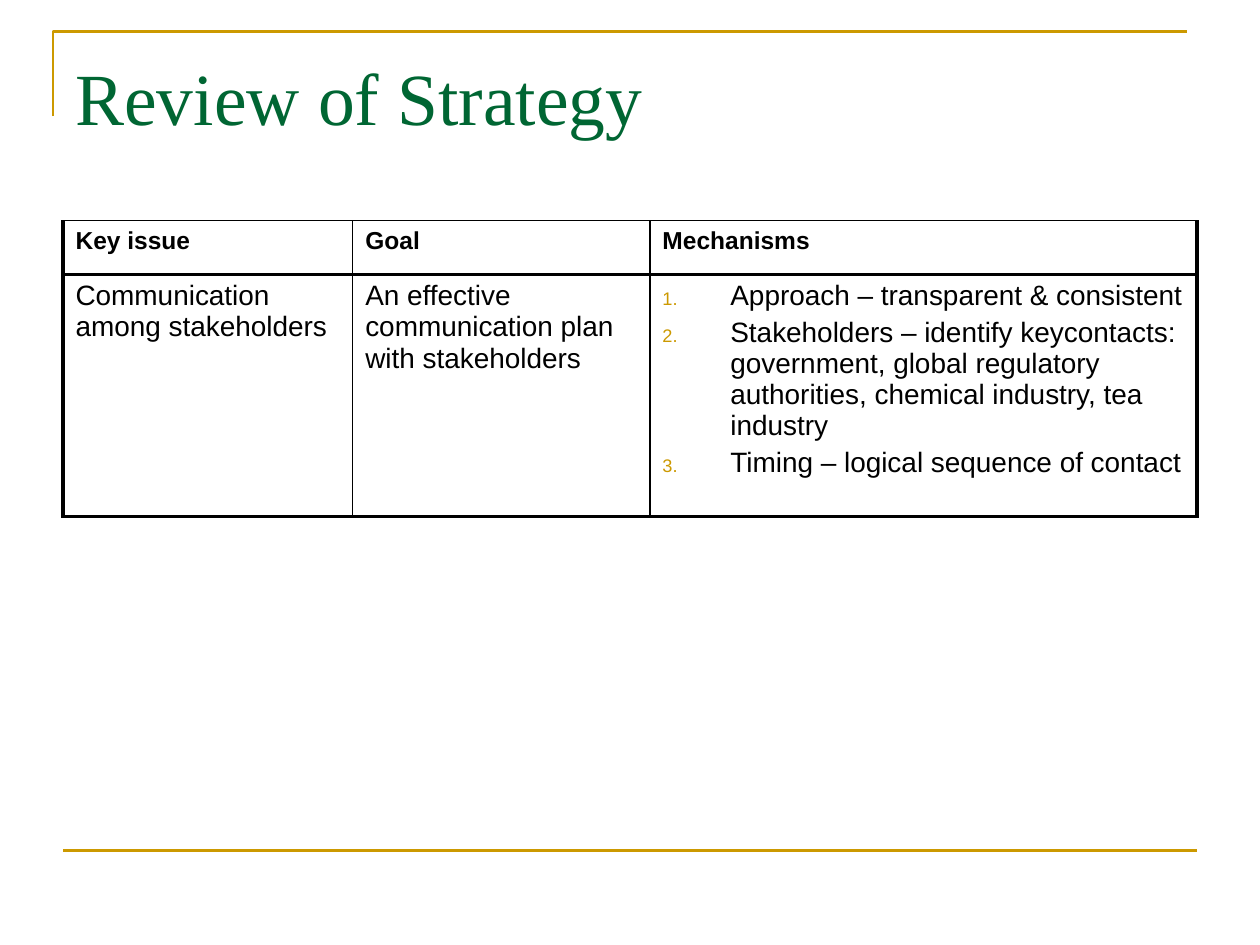
from pptx import Presentation
from pptx.dml.color import RGBColor
from pptx.enum.shapes import MSO_CONNECTOR
from pptx.oxml.ns import qn
from pptx.util import Cm, Pt
from lxml.etree import SubElement

GOLD = RGBColor(0xCC, 0x99, 0x00)
GREEN = RGBColor(0x00, 0x66, 0x33)
BLACK = RGBColor(0, 0, 0)

THIN, THICK = 1, 2.25
COLUMN_WIDTHS = [5.84, 5.99, 11.03]
ROW_HEIGHTS = [1.08, 4.88]
ROWS = [
    [["Key issue"], ["Goal"], ["Mechanisms"]],
    [
        ["Communication among stakeholders"],
        ["An effective communication plan with stakeholders"],
        [
            "Approach – transparent & consistent",
            "Stakeholders – identify keycontacts: government, global regulatory "
            "authorities, chemical industry, tea industry",
            "Timing – logical sequence of contact",
        ],
    ],
]
ROW_FONTS = [
    {"name": "Arial", "size": Pt(14), "bold": True},
    {"name": "Arial", "size": Pt(16), "bold": False},
]


def write(para, text, color, font_format):
    span = para.add_run()
    span.text = text
    span.font.color.rgb = color
    for name, value in font_format.items():
        setattr(span.font, name, value)


def add_fill(parent, tag, color):
    fill = SubElement(parent, qn(tag))
    SubElement(fill, qn("a:srgbClr"), val=str(color))


deck = Presentation()
deck.slide_width, deck.slide_height = Cm(25.4), Cm(19.05)
page = deck.slides.add_slide(deck.slide_layouts[6])

builder = page.shapes.build_freeform(Cm(1.07), Cm(2.34))
builder.add_line_segments([(Cm(1.07), Cm(0.64)), (Cm(23.93), Cm(0.64))], close=False)
corner = builder.convert_to_shape()
corner.shadow.inherit = False
corner.fill.background()

footer_line = page.shapes.add_connector(
    MSO_CONNECTOR.STRAIGHT, Cm(1.27), Cm(17.15), Cm(24.13), Cm(17.15)
)
SubElement(footer_line._element.spPr, qn("a:effectLst"))
for rule in (corner, footer_line):
    rule.line.color.rgb = GOLD
    rule.line.width = Pt(1.5)

title_box = page.shapes.add_textbox(Cm(1.27), Cm(0.76), Cm(22.86), Cm(3.18))
title_box.text_frame.word_wrap = True
title_box.text_frame.margin_top = Cm(0.29)
write(
    title_box.text_frame.paragraphs[0],
    "Review of Strategy",
    GREEN,
    {"name": "Times New Roman", "size": Pt(42)},
)

table = page.shapes.add_table(
    2, 3, Cm(1.27), Cm(4.45), Cm(sum(COLUMN_WIDTHS)), Cm(sum(ROW_HEIGHTS))
).table
table.first_row = table.horz_banding = False
for column, width in zip(table.columns, COLUMN_WIDTHS):
    column.width = Cm(width)
for row, height in zip(table.rows, ROW_HEIGHTS):
    row.height = Cm(height)

for r, row in enumerate(ROWS):
    for c, texts in enumerate(row):
        cell = table.cell(r, c)
        borders = {
            "a:lnL": THICK if c == 0 else THIN,
            "a:lnR": THICK if c == 2 else THIN,
            "a:lnT": THIN if r == 0 else THICK,
            "a:lnB": THICK,
        }
        properties = cell._tc.get_or_add_tcPr()
        for tag, width in borders.items():
            border = SubElement(properties, qn(tag), w=str(Pt(width)))
            add_fill(border, "a:solidFill", BLACK)
        cell.fill.background()

        for i, text in enumerate(texts):
            para = cell.text_frame.paragraphs[0] if i == 0 else cell.text_frame.add_paragraph()
            write(para, text, BLACK, ROW_FONTS[r])
            if i > 0:
                para.space_before = Pt(3.2)
            if len(texts) > 1:
                numbering = para._p.get_or_add_pPr()
                numbering.set("marL", str(Cm(1.37)))
                numbering.set("indent", str(-Cm(1.37)))
                add_fill(numbering, "a:buClr", GOLD)
                SubElement(numbering, qn("a:buSzPct"), val="65000")
                SubElement(numbering, qn("a:buFont"), typeface="Arial")
                SubElement(numbering, qn("a:buAutoNum"), type="arabicPeriod")

deck.save("out.pptx")
